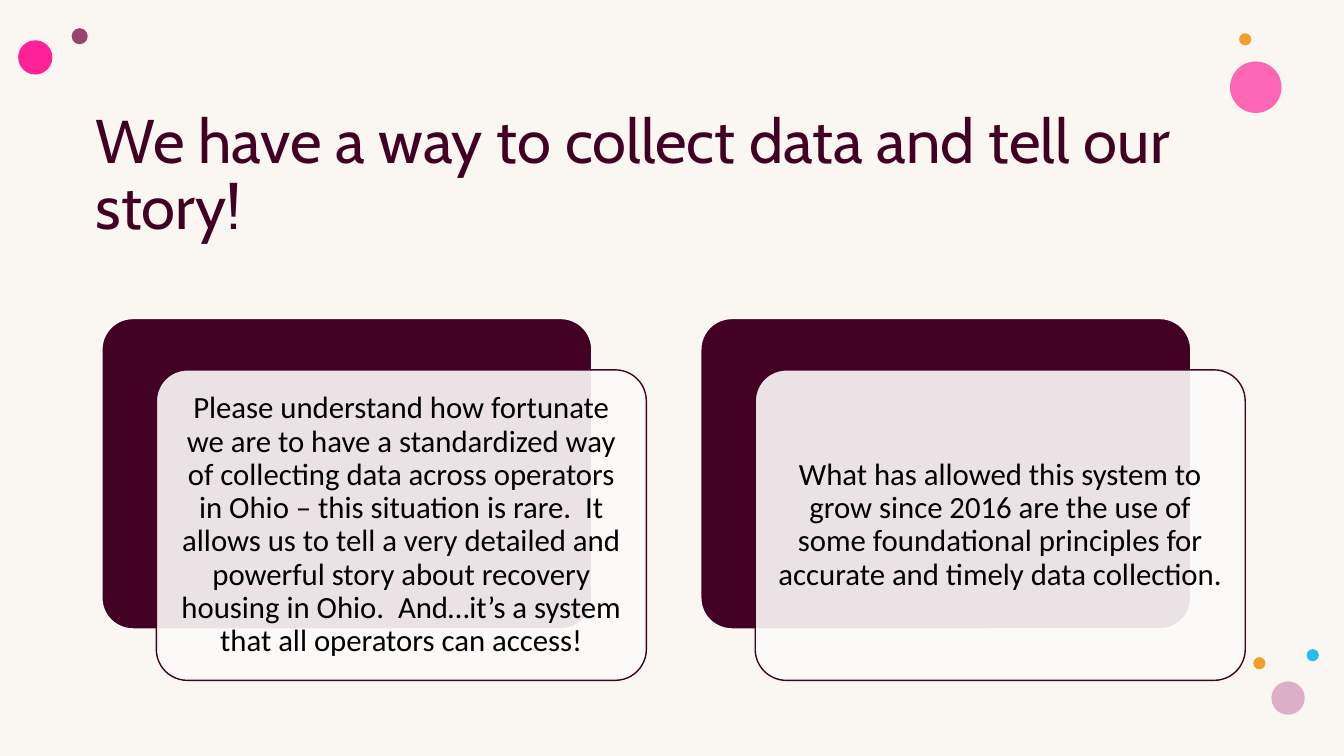
from lxml import etree
from pptx import Presentation
from pptx.enum.shapes import MSO_SHAPE
from pptx.enum.text import MSO_ANCHOR, PP_ALIGN
from pptx.dml.color import RGBColor
from pptx.oxml.ns import qn
from pptx.util import Inches, Pt

OVAL, ROUND = MSO_SHAPE.OVAL, MSO_SHAPE.ROUNDED_RECTANGLE
TOP, MID = MSO_ANCHOR.TOP, MSO_ANCHOR.MIDDLE
LEFT, MIDDLE = PP_ALIGN.LEFT, PP_ALIGN.CENTER
PLUM, CREAM = "420023", "FDFBF9"

deck = Presentation()
deck.slide_width, deck.slide_height = Inches(13.33), Inches(7.5)
COL, ROW = deck.slide_width / 100, deck.slide_height / 100
slide = deck.slides.add_slide(deck.slide_layouts[6])


def paint(fill, color, alpha=100):
    fill.solid()
    fill.fore_color.rgb = RGBColor.from_string(color)
    if alpha < 100:
        tone = fill.fore_color._xFill.find(qn("a:srgbClr"))
        etree.SubElement(tone, qn("a:alpha"), val=str(alpha * 1000))


def write(text, x, y, w, h, size, font, color, align=LEFT, anchor=TOP):
    box = slide.shapes.add_textbox(
        round(x * COL), round(y * ROW), round(w * COL), round(h * ROW))
    frame = box.text_frame
    frame.word_wrap = True
    frame.vertical_anchor = anchor
    para = frame.paragraphs[0]
    para.alignment, para.line_spacing = align, 0.9
    run = para.add_run()
    run.text = text
    run.font.size, run.font.name = Pt(size), font
    paint(run.font.fill, color)


paint(slide.background.fill, "FAF6F2")

dots = [
    (5.33, 3.73, 1.2, "97446E", 100),
    (91.52, 8.13, 3.83, "FF2F9C", 72),
    (92.2, 4.4, 0.9, "F39E29", 100),
    (1.35, 5.33, 2.55, "FF2197", 100),
    (97.22, 85.87, 0.9, "24BEEE", 100),
    (94.6, 90.13, 2.48, "DBAFC5", 100),
    (93.25, 86.93, 0.9, "F39E29", 100),
]
notes = [
    "Please understand how fortunate we are to have a standardized way of "
    "collecting data across operators in Ohio – this situation is rare.  It "
    "allows us to tell a very detailed and powerful story about recovery "
    "housing in Ohio.  And…it’s a system that all operators can access!",
    "What has allowed this system to grow since 2016 are the use of some "
    "foundational principles for accurate and timely data collection.",
]

CARD_W, CARD_H = 36.46, 41.07
FIRST, STEP, UPPER = 7.58, 44.56, 42.13
SHIFT_X, SHIFT_Y = 4.05, 6.8
PAD_X, PAD_Y = 0.68, 1.2

forms = [(OVAL, x, y, d, d * COL / ROW, color, alpha, None)
         for x, y, d, color, alpha in dots]
for col in range(len(notes)):
    x = FIRST + col * STEP
    forms += [
        (ROUND, x, UPPER, CARD_W, CARD_H, PLUM, 100, CREAM),
        (ROUND, x + SHIFT_X, UPPER + SHIFT_Y, CARD_W, CARD_H, CREAM, 90, PLUM),
    ]

for kind, x, y, w, h, color, alpha, edge in forms:
    form = slide.shapes.add_shape(
        kind, round(x * COL), round(y * ROW), round(w * COL), round(h * ROW))
    form.shadow.inherit = False
    paint(form.fill, color, alpha)
    if edge:
        form.adjustments[0] = 0.1
        form.line.width = Pt(1)
        paint(form.line.fill, edge)
    else:
        form.line.fill.background()

write("We have a way to collect data and tell our story!",
      6.38, 13.87, 88.3, 26.4, 44, "Cabin", PLUM)
for col, note in enumerate(notes):
    write(note, FIRST + col * STEP + SHIFT_X + PAD_X, UPPER + SHIFT_Y + PAD_Y,
          CARD_W - 2 * PAD_X, CARD_H - 2 * PAD_Y, 22, "Calibri", "000000",
          MIDDLE, MID)

deck.save("out.pptx")
